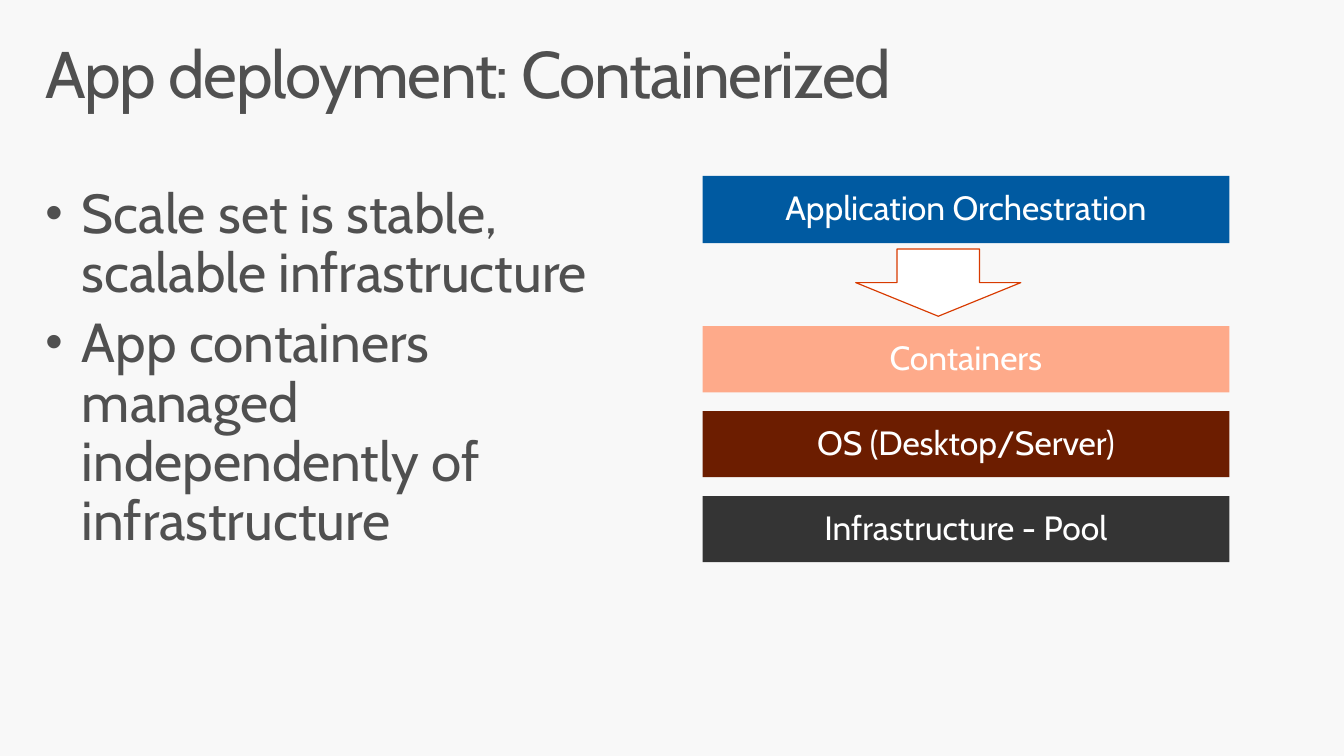
from dataclasses import dataclass

from lxml.etree import SubElement
from pptx import Presentation
from pptx.dml.color import RGBColor
from pptx.enum.shapes import MSO_SHAPE
from pptx.enum.text import MSO_ANCHOR, PP_ALIGN
from pptx.oxml.ns import qn
from pptx.util import Pt

PX = 9144


@dataclass(frozen=True)
class Theme:
    font: str = "Cabin"
    background: str = "F8F8F8"
    text: str = "505050"
    light: str = "FFFFFF"
    arrow_line: str = "D83B01"
    orchestration: str = "005AA1"
    containers: str = "FEAA8A"
    system: str = "6C1D00"
    infrastructure: str = "343434"
    title_size: float = 48
    body_size: float = 40
    bar_size: float = 24.5


THEME = Theme()


def px(*lengths):
    return [length * PX for length in lengths]


def paint(fill, color):
    fill.solid()
    fill.fore_color.rgb = RGBColor.from_string(color)


def set_frame(frame, margin_x, margin_y, anchor):
    side, edge = px(margin_x, margin_y)
    settings = {
        "word_wrap": True,
        "vertical_anchor": anchor,
        "margin_left": side,
        "margin_right": side,
        "margin_top": edge,
        "margin_bottom": edge,
    }
    for name, value in settings.items():
        setattr(frame, name, value)


def write(para, text, size, color, align=PP_ALIGN.LEFT):
    para.alignment = align
    para.line_spacing = 0.9
    span = para.add_run()
    span.text = text
    for name, value in {"name": THEME.font, "size": Pt(size)}.items():
        setattr(span.font, name, value)
    span.font.color.rgb = RGBColor.from_string(color)
    return span


def add_text_box(page, place):
    box = page.shapes.add_textbox(*px(*place))
    set_frame(box.text_frame, 16, 10, MSO_ANCHOR.TOP)
    return box.text_frame


def add_title(page, text, place):
    frame = add_text_box(page, place)
    span = write(frame.paragraphs[0], text, THEME.title_size, THEME.text)
    span.font._element.set("spc", "-100")


def add_bullets(page, lines, place):
    frame = add_text_box(page, place)
    indent = 37 * PX
    for index, line in enumerate(lines):
        para = frame.add_paragraph() if index else frame.paragraphs[0]
        write(para, line, THEME.body_size, THEME.text)
        para.space_before = Pt(THEME.body_size * 0.2)
        properties = para._p.get_or_add_pPr()
        properties.set("marL", str(indent))
        properties.set("indent", str(-indent))
        SubElement(properties, qn("a:buSzPct"), val="90000")
        SubElement(properties, qn("a:buFont"), typeface="Arial")
        SubElement(properties, qn("a:buChar"), char="•")


def add_figure(page, kind, place, color):
    figure = page.shapes.add_shape(kind, *px(*place))
    figure.shadow.inherit = False
    paint(figure.fill, color)
    return figure


def add_bar(page, text, color, top, height=67):
    bar = add_figure(page, MSO_SHAPE.RECTANGLE, (711, top, 533, height), color)
    bar.line.fill.background()
    set_frame(bar.text_frame, 20, 16, MSO_ANCHOR.MIDDLE)
    para = bar.text_frame.paragraphs[0]
    write(para, text, THEME.bar_size, THEME.light, PP_ALIGN.CENTER)


def add_down_arrow(page, place):
    arrow = add_figure(page, MSO_SHAPE.DOWN_ARROW, place, THEME.light)
    paint(arrow.line.fill, THEME.arrow_line)
    arrow.line.width = Pt(0.85)


def main():
    """Build the slide on containerized app deployment."""
    deck = Presentation()
    deck.slide_width, deck.slide_height = px(1360, 765)
    page = deck.slides.add_slide(deck.slide_layouts[6])
    paint(page.background.fill, THEME.background)

    add_title(page, "App deployment: Containerized", (30, 32, 1300, 100))
    add_bullets(
        page,
        [
            "Scale set is stable, scalable infrastructure",
            "App containers managed independently of infrastructure",
        ],
        (30, 178, 594, 472),
    )

    add_bar(page, "Application Orchestration", THEME.orchestration, 178, 68)
    add_down_arrow(page, (866, 252, 167, 68))
    layers = [
        ("Containers", THEME.containers),
        ("OS (Desktop/Server)", THEME.system),
        ("Infrastructure - Pool", THEME.infrastructure),
    ]
    for row, (text, color) in enumerate(layers):
        add_bar(page, text, color, 330 + 86 * row)

    deck.save("out.pptx")


if __name__ == "__main__":
    main()
